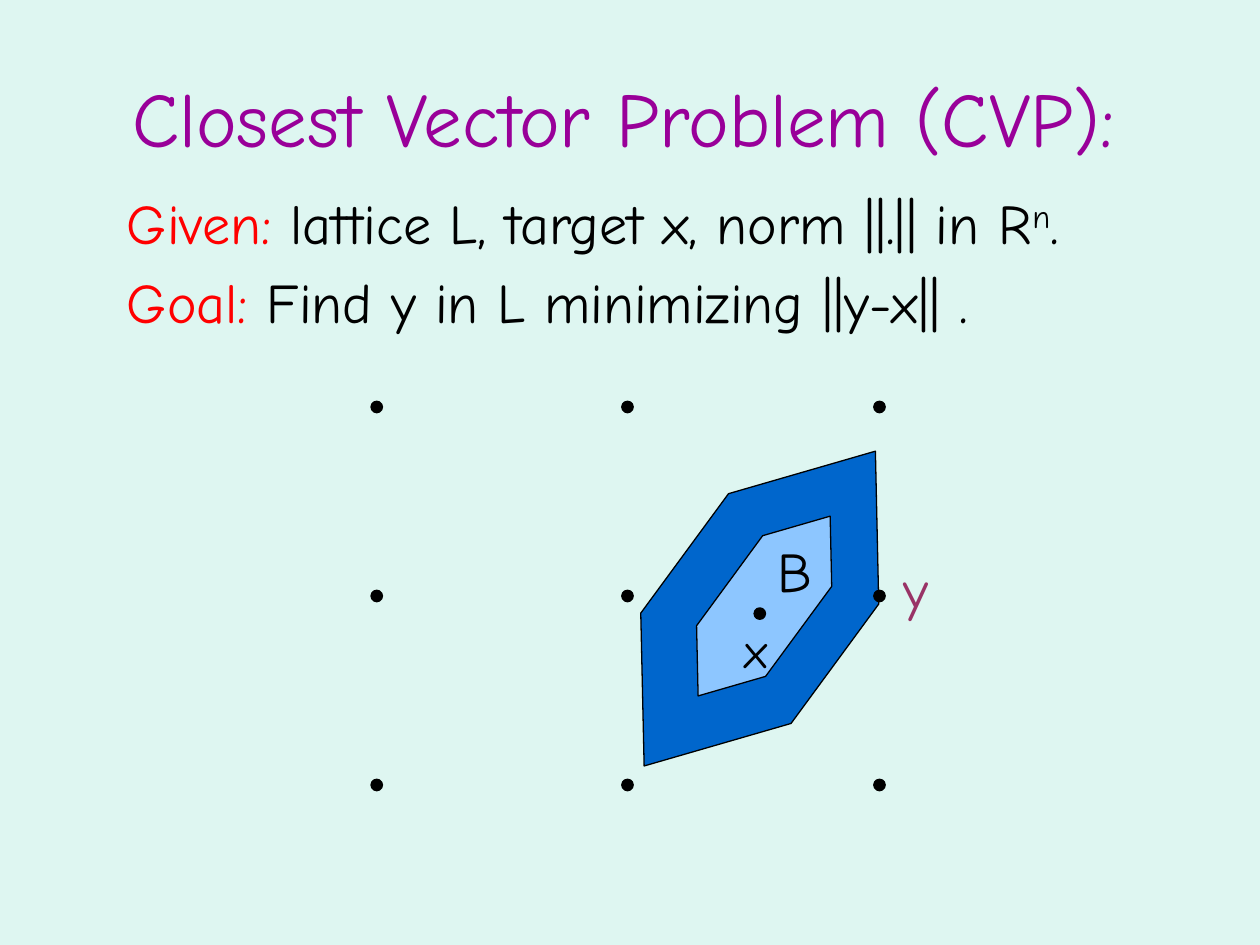
from pptx import Presentation
from pptx.dml.color import RGBColor
from pptx.enum import shapes, text
from pptx.util import Inches, Pt

FONT = "Comic Neue"
BLACK, RED = "000000", "FF0000"
DOT = 0.08


def tint(hue):
    return RGBColor.from_string(hue)


def add_text(parent, box, paras, size=32, align=text.PP_ALIGN.LEFT,
             anchor=text.MSO_ANCHOR.TOP, wrap=False, before=0, hang=0):
    """Add a text box; each paragraph is a list of (words, colour, raised %)."""
    frame = parent.add_textbox(*map(Inches, box)).text_frame
    frame.word_wrap = wrap
    frame.vertical_anchor = anchor
    fit = text.MSO_AUTO_SIZE
    frame.auto_size = fit.NONE if wrap else fit.SHAPE_TO_FIT_TEXT
    for i, runs in enumerate(paras):
        para = frame.add_paragraph() if i else frame.paragraphs[0]
        para.alignment = align
        para.space_before = Pt(before)
        if hang:
            props = para._p.get_or_add_pPr()
            props.set("marL", str(Inches(hang)))
            props.set("indent", str(-Inches(hang)))
        for words, hue, *lift in runs:
            run = para.add_run()
            run.text = words
            run.font.name = FONT
            run.font.size = Pt(size)
            run.font.color.rgb = tint(hue)
            if lift:
                run._r.get_or_add_rPr().set("baseline", str(lift[0] * 1000))


def add_shape(parent, kind, box, fill, width):
    shape = parent.add_shape(kind, *map(Inches, box))
    shape.shadow.inherit = False
    shape.fill.solid()
    shape.fill.fore_color.rgb = tint(fill)
    shape.line.color.rgb = tint(BLACK)
    shape.line.width = Pt(width)
    return shape


def add_ball(parent, box, fill):
    """Add the tilted hexagon that is a unit ball of the norm."""
    ball = add_shape(parent, shapes.MSO_SHAPE.HEXAGON, box, fill, 0.75)
    ball.adjustments[0] = 0.65
    ball.rotation = 306.3


def add_dot(parent, x, y):
    add_shape(parent, shapes.MSO_SHAPE.OVAL, (x, y, DOT, DOT), BLACK, 1.5)


def main():
    deck = Presentation()
    deck.slide_width, deck.slide_height = Inches(10), Inches(7.5)
    slide = deck.slides.add_slide(deck.slide_layouts[6])
    slide.background.fill.solid()
    slide.background.fill.fore_color.rgb = tint("DEF6F1")
    items = slide.shapes

    add_text(items, (0.91, 1.45, 8.87, 1.48), [
        [("Given: ", RED), ("lattice L, target x, norm ||.|| in R", BLACK),
         ("n", BLACK, 30), (".", BLACK)],
        [("Goal:", RED), (" Find y in L minimizing ||y-x|| .", BLACK)],
    ], wrap=True, before=6.4, hang=0.38)
    add_text(items, (0.14, 0.3, 9.62, 1.25),
             [[("Closest Vector Problem (CVP):", "990099")]], size=44,
             align=text.PP_ALIGN.CENTER, anchor=text.MSO_ANCHOR.MIDDLE,
             wrap=True)

    group = items.add_group_shape().shapes
    add_ball(group, (4.48, 4.09, 3.1, 1.48), "0066CC")
    add_text(group, (7.04, 4.35, 0.43, 0.63), [[("y", "993366")]],
             align=text.PP_ALIGN.RIGHT)
    add_ball(items, (5.18, 4.47, 1.77, 0.68), "8DC6FF")
    add_text(items, (5.81, 4.87, 0.44, 0.57), [[("x", BLACK)]], size=28)

    for x in (2.95, 4.94, 6.94):
        for y in (3.19, 4.69, 6.19):
            add_dot(items, x, y)
    add_text(items, (6.07, 4.21, 0.48, 0.63), [[("B", BLACK)]])
    add_dot(items, 5.99, 4.83)

    deck.save("out.pptx")


if __name__ == "__main__":
    main()
